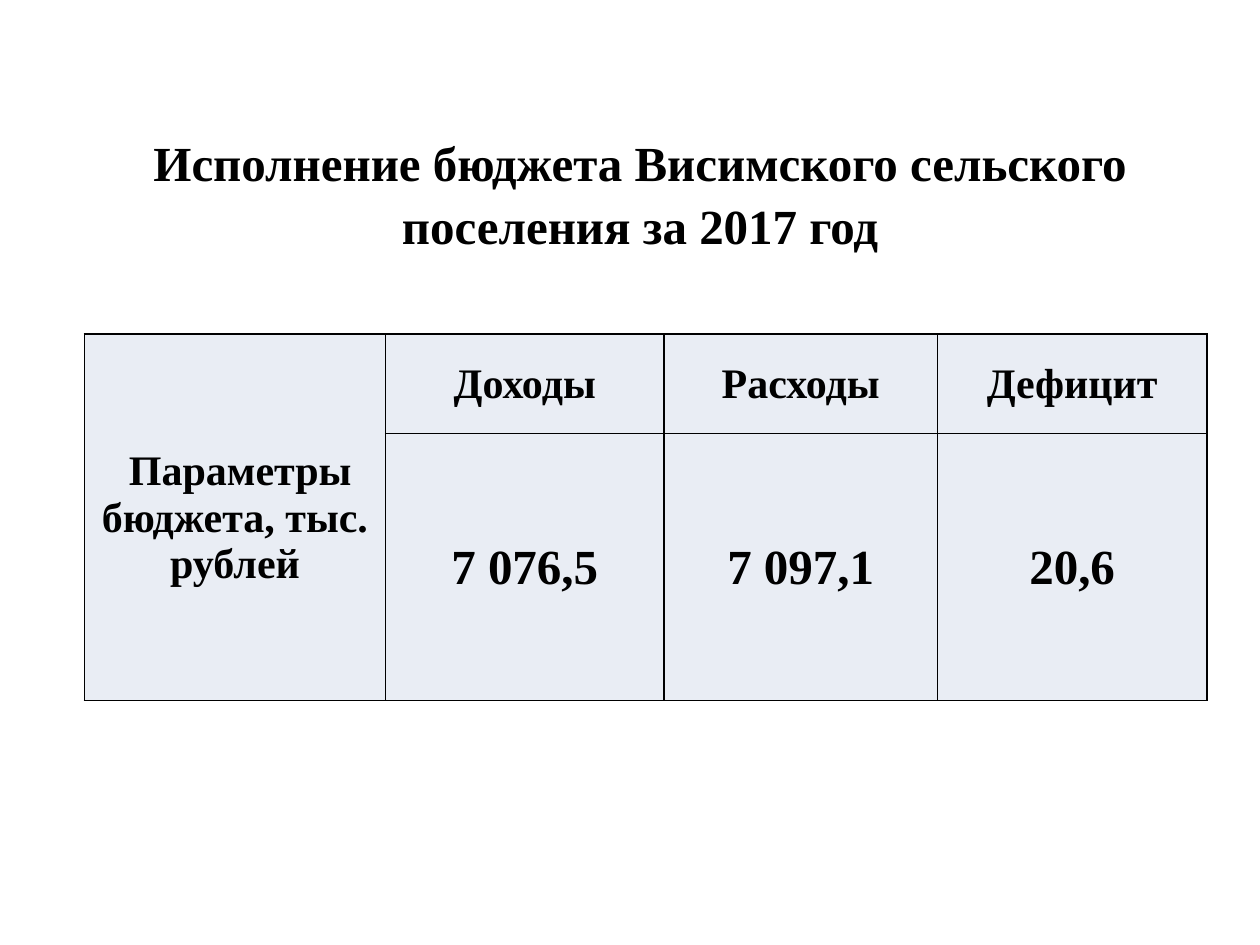
from typing import NamedTuple

from lxml import etree
from pptx import Presentation, util as u
from pptx.dml.color import RGBColor
from pptx.enum import text as t
from pptx.oxml.ns import qn

COLORS = {"text": "000000", "border": "000000", "cell": "E9EDF4"}
FONT = "Times New Roman"
COLUMN_WIDTHS = (2.39, 2.21, 2.17, 2.14)
ROW_HEIGHTS = (0.79, 2.12)


class CellContent(NamedTuple):
    row: int
    column: int
    text: str
    size: int


CELLS = (
    CellContent(0, 0, " Параметры бюджета, тыс. рублей", 24),
    CellContent(0, 1, "Доходы", 24),
    CellContent(0, 2, "Расходы", 24),
    CellContent(0, 3, "Дефицит", 24),
    CellContent(1, 1, "7 076,5", 28),
    CellContent(1, 2, "7 097,1", 28),
    CellContent(1, 3, "20,6", 28),
)


def write_text(frame, text: str, *, size: int, bold: bool = True,
               color: str = "text", spacing: float = 1.0) -> None:
    frame.word_wrap = True
    paragraph = frame.paragraphs[0]
    paragraph.alignment = t.PP_ALIGN.CENTER
    paragraph.line_spacing = spacing
    run = paragraph.add_run()
    run.text = text
    run.font.name = FONT
    run.font.size = u.Pt(size)
    run.font.bold = bold
    run.font.color.rgb = RGBColor.from_string(COLORS[color])


def style_cell(cell) -> None:
    cell.vertical_anchor = t.MSO_ANCHOR.MIDDLE
    cell.margin_left = cell.margin_right = cell.margin_top = u.Inches(0.01)
    cell.margin_bottom = 0
    properties = cell._tc.get_or_add_tcPr()
    # Borders come before the fill in the cell properties
    for side in ("lnL", "lnR", "lnT", "lnB"):
        line = etree.SubElement(properties, qn(f"a:{side}"), w=str(u.Pt(1)))
        fill = etree.SubElement(line, qn("a:solidFill"))
        etree.SubElement(fill, qn("a:srgbClr"), val=COLORS["border"])
    cell.fill.solid()
    cell.fill.fore_color.rgb = RGBColor.from_string(COLORS["cell"])


def add_title(slide) -> None:
    title = slide.shapes.title
    title.left, title.top = u.Inches(0.59), u.Inches(0.92)
    title.width, title.height = u.Inches(8.98), u.Inches(1.2)
    title.text_frame.vertical_anchor = t.MSO_ANCHOR.MIDDLE
    write_text(title.text_frame,
               "Исполнение бюджета Висимского сельского поселения за 2017 год",
               size=28, spacing=1.07)


def add_budget_table(slide) -> None:
    table = slide.shapes.add_table(
        len(ROW_HEIGHTS), len(COLUMN_WIDTHS), u.Inches(0.67), u.Inches(2.65),
        u.Inches(sum(COLUMN_WIDTHS)), u.Inches(sum(ROW_HEIGHTS))).table
    table.first_row = table.horz_banding = False
    for column, width in zip(table.columns, COLUMN_WIDTHS):
        column.width = u.Inches(width)
    for row, height in zip(table.rows, ROW_HEIGHTS):
        row.height = u.Inches(height)
    for cell in table.iter_cells():
        style_cell(cell)
    # The row label spans both rows
    table.cell(0, 0).merge(table.cell(1, 0))
    for content in CELLS:
        cell = table.cell(content.row, content.column)
        write_text(cell.text_frame, content.text, size=content.size)


def main() -> None:
    presentation = Presentation()
    presentation.slide_width = u.Inches(10)
    presentation.slide_height = u.Inches(7.5)
    slide = presentation.slides.add_slide(presentation.slide_layouts[5])
    add_title(slide)
    add_budget_table(slide)
    presentation.save("out.pptx")


if __name__ == "__main__":
    main()
